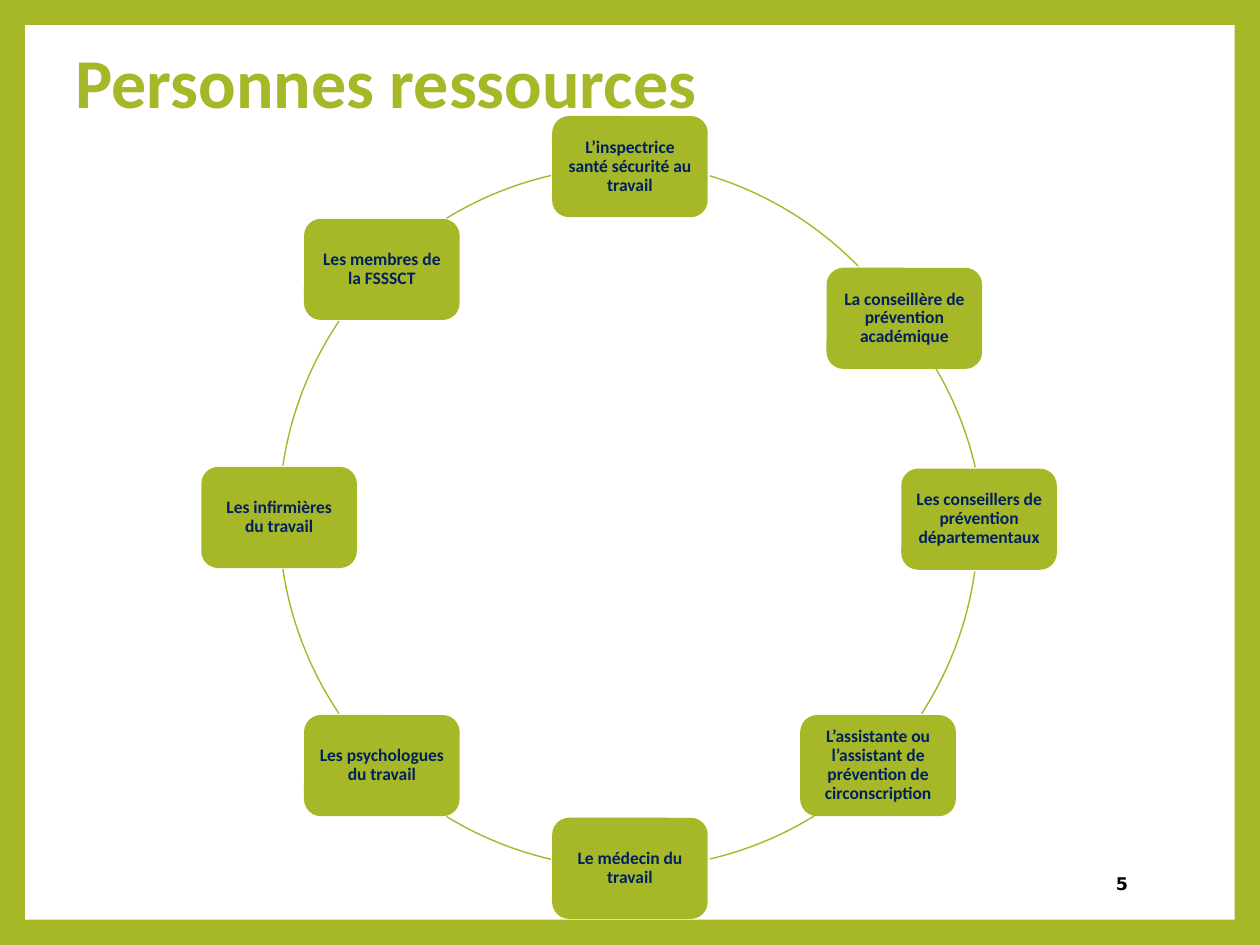
"""Build the slide showing a ring of occupational health contacts."""
import math
from dataclasses import dataclass

from pptx import Presentation
from pptx.dml.color import RGBColor
from pptx.enum import shapes, text
from pptx.util import Pt

TITLE = "Personnes ressources"
PAGE_NUMBER = "5"

# label, box shift from the ring, arc start and end in degrees, arc shift
CONTACTS = [
    ("L’inspectrice santé sécurité au travail", (0, 0), (287, 315.7), (-13, -3.5)),
    ("La conseillère de prévention académique", (15, 28), (329.6, 347), (2, 16.5)),
    ("Les conseillers de prévention départementaux", (-1, 1), (8, 33), (-1.5, 3)),
    ("L’assistante ou l’assistant de prévention de circonscription",
     (0, 0), (58.3, 76.8), (0, 0)),
    ("Le médecin du travail", (0, 0), (103, 121.5), (0, 0)),
    ("Les psychologues du travail", (0, 0), (146, 171.5), (0, 0)),
    ("Les infirmières du travail", (0, 0), (188.5, 214), (0, 0)),
    ("Les membres de la FSSSCT", (0, 0), (238.5, 257), (0, 0)),
]


@dataclass(frozen=True)
class Theme:
    """Colours, fonts and type sizes."""
    green: RGBColor = RGBColor(0xA6, 0xB7, 0x27)
    navy: RGBColor = RGBColor(0x00, 0x20, 0x60)
    white: RGBColor = RGBColor(0xFF, 0xFF, 0xFF)
    black: RGBColor = RGBColor(0, 0, 0)
    font: str = "Calibri"
    number_font: str = "DejaVu Sans"
    title_size: float = 40
    label_size: float = 10


THEME = Theme()
WIDTH, HEIGHT, BORDER = 720, 540, 14.4
CENTRE_X, CENTRE_Y, RADIUS = 360, 295.7, 200.5
BOX_WIDTH, BOX_HEIGHT, BOX_INSET = 88.9, 57.8, 5.5
ARC_WIDTH = 0.79


def add_shape(page, kind, left, top, width, height, fill=None):
    """Add a shadowless preset shape with no outline."""
    shape = page.shapes.add_shape(kind, Pt(left), Pt(top), Pt(width), Pt(height))
    shape.shadow.inherit = False
    shape.line.fill.background()
    if fill is None:
        shape.fill.background()
    else:
        shape.fill.solid()
        shape.fill.fore_color.rgb = fill
    return shape


def write(box, words, size, colour, align, font=THEME.font, spacing=0.9):
    """Put one bold, vertically centred paragraph into a box."""
    frame = box.text_frame
    frame.word_wrap = True
    frame.vertical_anchor = text.MSO_ANCHOR.MIDDLE
    para = frame.paragraphs[0]
    para.text = words
    para.alignment = align
    para.line_spacing = spacing
    para.font.name = font
    para.font.size = Pt(size)
    para.font.bold = True
    para.font.color.rgb = colour


def add_contact(page, label, x, y):
    """Add a rounded box centred on a point."""
    box = add_shape(page, shapes.MSO_SHAPE.ROUNDED_RECTANGLE, x - BOX_WIDTH / 2,
                    y - BOX_HEIGHT / 2, BOX_WIDTH, BOX_HEIGHT, THEME.green)
    write(box, label, THEME.label_size, THEME.navy, text.PP_ALIGN.CENTER)
    frame = box.text_frame
    frame.margin_left = frame.margin_right = Pt(BOX_INSET)
    frame.margin_top = frame.margin_bottom = Pt(BOX_INSET)


def add_arc(page, angles, shift):
    """Add the part of the ring between two angles."""
    arc = add_shape(page, shapes.MSO_SHAPE.ARC, CENTRE_X - RADIUS + shift[0],
                    CENTRE_Y - RADIUS + shift[1], 2 * RADIUS, 2 * RADIUS)
    for index, angle in enumerate(angles):
        arc.adjustments[index] = angle * 60000 / 100000
    arc.line.color.rgb = THEME.green
    arc.line.width = Pt(ARC_WIDTH)


def main():
    """Build and save the deck."""
    deck = Presentation()
    deck.slide_width, deck.slide_height = Pt(WIDTH), Pt(HEIGHT)
    page = deck.slides.add_slide(deck.slide_layouts[6])
    page.background.fill.solid()
    page.background.fill.fore_color.rgb = THEME.green
    add_shape(page, shapes.MSO_SHAPE.RECTANGLE, BORDER, BORDER,
              WIDTH - 2 * BORDER, HEIGHT - 2 * BORDER, THEME.white)

    title = page.shapes.add_textbox(Pt(36), Pt(21.6), Pt(648), Pt(55.4))
    write(title, TITLE, THEME.title_size, THEME.green, text.PP_ALIGN.LEFT)
    number = page.shapes.add_textbox(Pt(550.8), Pt(490.3), Pt(100.8), Pt(28.8))
    write(number, PAGE_NUMBER, THEME.label_size, THEME.black,
          text.PP_ALIGN.RIGHT, THEME.number_font, 1.0)

    for index, (label, box_shift, angles, arc_shift) in enumerate(CONTACTS):
        turn = 2 * math.pi * index / len(CONTACTS)
        add_contact(page, label,
                    CENTRE_X + RADIUS * math.sin(turn) + box_shift[0],
                    CENTRE_Y - RADIUS * math.cos(turn) + box_shift[1])
        add_arc(page, angles, arc_shift)

    deck.save("out.pptx")


if __name__ == "__main__":
    main()
